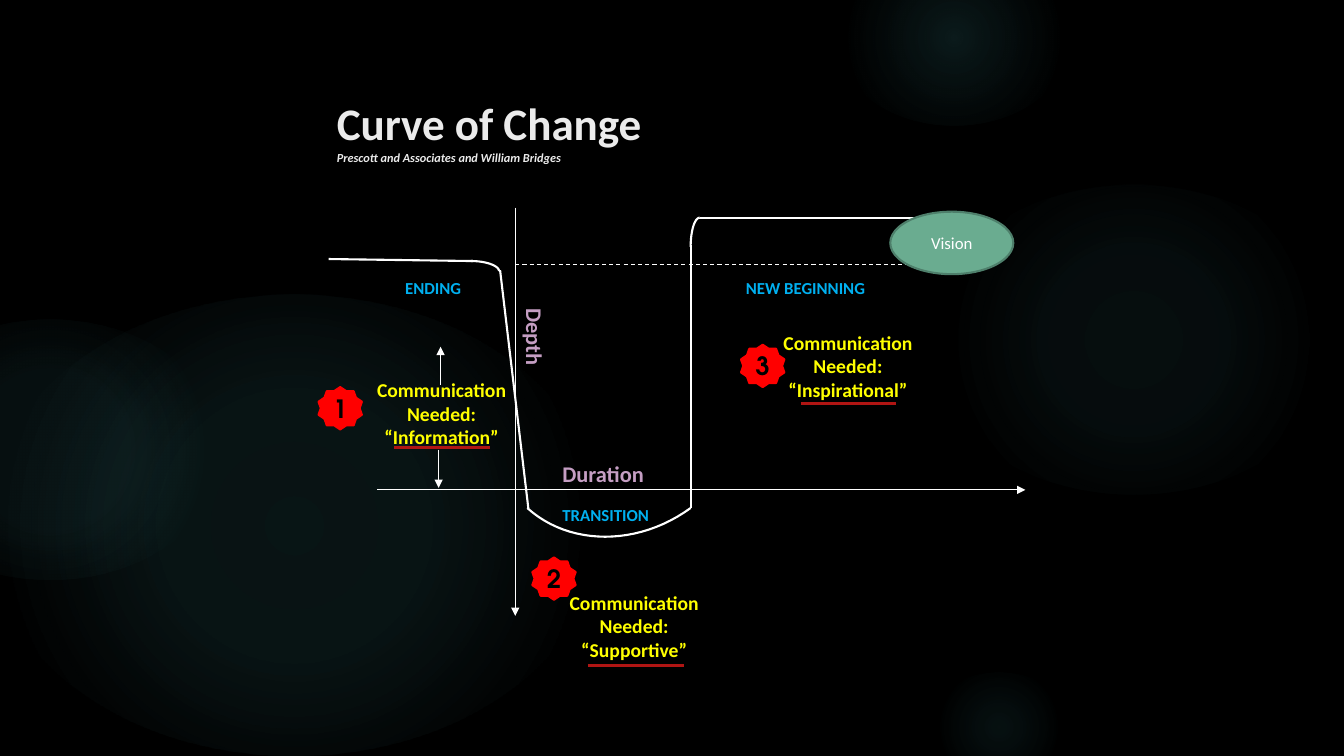
"""Builds the Curve of Change slide: axes, change curve, phases and communication needs."""
from lxml import etree
from pptx import Presentation
from pptx.dml.color import RGBColor
from pptx.enum.dml import MSO_LINE
from pptx.enum.shapes import MSO_CONNECTOR, MSO_SHAPE
from pptx.enum.text import MSO_ANCHOR, MSO_AUTO_SIZE, PP_ALIGN
from pptx.oxml import parse_xml
from pptx.oxml.ns import nsdecls, qn
from pptx.util import Inches, Pt

OVAL, STAR = MSO_SHAPE.OVAL, MSO_SHAPE.STAR_10_POINT
STRAIGHT, DASH = MSO_CONNECTOR.STRAIGHT, MSO_LINE.DASH
LEFT, CENTER = PP_ALIGN.LEFT, PP_ALIGN.CENTER
TOP, MIDDLE = MSO_ANCHOR.TOP, MSO_ANCHOR.MIDDLE
NO_FIT, GROW = MSO_AUTO_SIZE.NONE, MSO_AUTO_SIZE.SHAPE_TO_FIT_TEXT
CELL = Inches(0.01)
COLUMNS, ROWS = 1333, 750
COLORS = {
    "background": "000000", "glow": "50B9C1", "line": "FFFFFF", "title": "EBEBEB",
    "vision": "6AAC90", "vision edge": "4E7F6B", "phase": "00B0F0", "need": "FFFF00",
    "badge": "FF0000", "number": "000000", "axis": "C59EC3", "underline": "B01513",
}
RGB = {name: RGBColor.from_string(value) for name, value in COLORS.items()}


def draw_line(start, end, color="line", width=0.75, arrow=False, dash=None):
    """Draws a straight line between two grid points."""
    line = page.shapes.add_connector(STRAIGHT, *(CELL * value for value in start + end))
    line.line.color.rgb = RGB[color]
    line.line.width = Pt(width)
    if dash:
        line.line.dash_style = dash
    properties = line._element.spPr
    if arrow:
        etree.SubElement(properties.find(qn("a:ln")), qn("a:tailEnd"), type="triangle")
    etree.SubElement(properties, qn("a:effectLst"))


def write_text(box, lines, color, size, align=LEFT, font="Calibri", bold=True, **frame_format):
    """Writes one paragraph per line into a shape."""
    frame = box.text_frame
    for name, value in frame_format.items():
        setattr(frame, name, value)
    for index, line in enumerate(lines):
        para = frame.add_paragraph() if index else frame.paragraphs[0]
        para.alignment = align
        span = para.add_run()
        span.text = line
        for name, value in {"name": font, "size": Pt(size), "bold": bold}.items():
            setattr(span.font, name, value)
        span.font.color.rgb = RGB[color]


deck = Presentation()
deck.slide_width, deck.slide_height = CELL * COLUMNS, CELL * ROWS
page = deck.slides.add_slide(deck.slide_layouts[5])
page.background.fill.solid()
page.background.fill.fore_color.rgb = RGB["background"]

glows = [
    ((919, 183, 411, 308), ((0, 7), (36, 6), (69, 0))),
    ((830, -50, 233, 175), ((0, 14), (36, 7), (73, 0))),
    ((919, 667, 144, 108), ((0, 9), (36, 5), (66, 0))),
    ((-14, 292, 611, 458), ((0, 11), (36, 10), (75, 0))),
    ((-122, 317, 344, 258), ((0, 8), (36, 8), (72, 0))),
]
for area, stops in glows:
    glow = page.shapes.add_shape(OVAL, *(CELL * value for value in area))
    glow.shadow.inherit = False
    glow.line.fill.background()
    glow.fill.background()
    stop_xml = "".join(
        f'<a:gs pos="{place * 1000}"><a:srgbClr val="{COLORS["glow"]}">'
        f'<a:alpha val="{opacity * 1000}"/></a:srgbClr></a:gs>'
        for place, opacity in stops
    )
    gradient = parse_xml(
        f'<a:gradFill {nsdecls("a")} rotWithShape="1"><a:gsLst>{stop_xml}</a:gsLst>'
        '<a:path path="circle"><a:fillToRect l="50000" t="50000" r="50000" b="50000"/>'
        "</a:path></a:gradFill>"
    )
    properties = glow._element.spPr
    properties.replace(properties.find(qn("a:noFill")), gradient)

draw_line((511, 206), (511, 611), arrow=True)
draw_line((511, 262), (961, 262), dash=DASH)
draw_line((374, 486), (1017, 486), arrow=True)

curve_lines = [
    ((326, 257), (469, 259)),
    ((496, 268), (524, 504)),
    ((685, 504), (685, 342)),
    ((685, 342), (685, 243)),
    ((694, 216), (959, 216)),
]
for start, end in curve_lines:
    draw_line(start, end, width=1.5)

curve_bends = [
    ((467, 259), (483, 259), (495, 264), (495, 269)),
    ((685, 504), (633, 542), (565, 542), (523, 504)),
    ((685, 245), (685, 229), (689, 216), (694, 216)),
]
STEPS = 24
for bend in curve_bends:
    points = []
    for step in range(STEPS + 1):
        t = step / STEPS
        weights = ((1 - t) ** 3, 3 * t * (1 - t) ** 2, 3 * t ** 2 * (1 - t), t ** 3)
        points.append([CELL * sum(w * p[axis] for w, p in zip(weights, bend)) for axis in (0, 1)])
    builder = page.shapes.build_freeform(*points[0])
    builder.add_line_segments(points[1:], close=False)
    arc = builder.convert_to_shape()
    arc.shadow.inherit = False
    arc.fill.background()
    arc.line.color.rgb = RGB["line"]
    arc.line.width = Pt(1.5)

draw_line((437, 382), (437, 344), arrow=True)
draw_line((435, 446), (435, 484), arrow=True)

title = page.shapes.title
title.left, title.top, title.width, title.height = (CELL * value for value in (324, 90, 675, 94))
write_text(title, ["Curve of Change "], "title", 32.2,
           vertical_anchor=TOP, auto_size=NO_FIT, word_wrap=True)
heading = title.text_frame.paragraphs[0]
heading.add_line_break()
credit = heading.add_run()
credit.text = "Prescott and Associates and William Bridges"
for name, value in {"name": "Calibri", "size": Pt(8.8), "bold": True, "italic": True}.items():
    setattr(credit.font, name, value)
credit.font.color.rgb = RGB["title"]

vision = page.shapes.add_shape(OVAL, *(CELL * value for value in (883, 210, 122, 62)))
vision.shadow.inherit = False
vision.fill.solid()
vision.fill.fore_color.rgb = RGB["vision"]
vision.line.color.rgb = RGB["vision edge"]
vision.line.width = Pt(1.5)
write_text(vision, ["Vision"], "line", 12, CENTER, bold=False, vertical_anchor=MIDDLE)

labels = [
    ("ENDING", (392, 271, 76, 30), "phase", 12, 0),
    ("NEW BEGINNING", (730, 271, 140, 30), "phase", 12, 0),
    ("TRANSITION", (548, 496, 107, 30), "phase", 12, 0),
    ("Duration", (548, 452, 102, 37), "axis", 16, 0),
    ("Depth", (492, 316, 77, 37), "axis", 16, 90),
]
for text, area, color, size, turn in labels:
    label = page.shapes.add_textbox(*(CELL * value for value in area))
    label.rotation = turn
    write_text(label, [text], color, size, word_wrap=False, auto_size=GROW)

needs = [
    ("“Information”", (357, 370, 162, 81), (316, 384), (391, 444)),
    ("“Supportive”", (522, 581, 214, 81), (528, 553), (583, 660)),
    ("“Inspirational”", (742, 323, 198, 81), (735, 342), (794, 400)),
]
for number, (need, area, badge_corner, mark) in enumerate(needs, 1):
    box = page.shapes.add_textbox(*(CELL * value for value in area))
    write_text(box, ["Communication Needed:", need], "need", 14, CENTER,
               word_wrap=True, auto_size=GROW)
    badge = page.shapes.add_shape(STAR, *(CELL * value for value in badge_corner + (43, 42)))
    badge.shadow.inherit = False
    badge.fill.solid()
    badge.fill.fore_color.rgb = badge.line.color.rgb = RGB["badge"]
    badge.line.width = Pt(1.5)
    write_text(badge, [str(number)], "number", 18, CENTER, "TeX Gyre Adventor",
               vertical_anchor=MIDDLE, margin_left=0, margin_right=0,
               margin_top=0, margin_bottom=0)
    draw_line(mark, (mark[0] + 95, mark[1]), "underline", 2.25)

deck.save("out.pptx")
